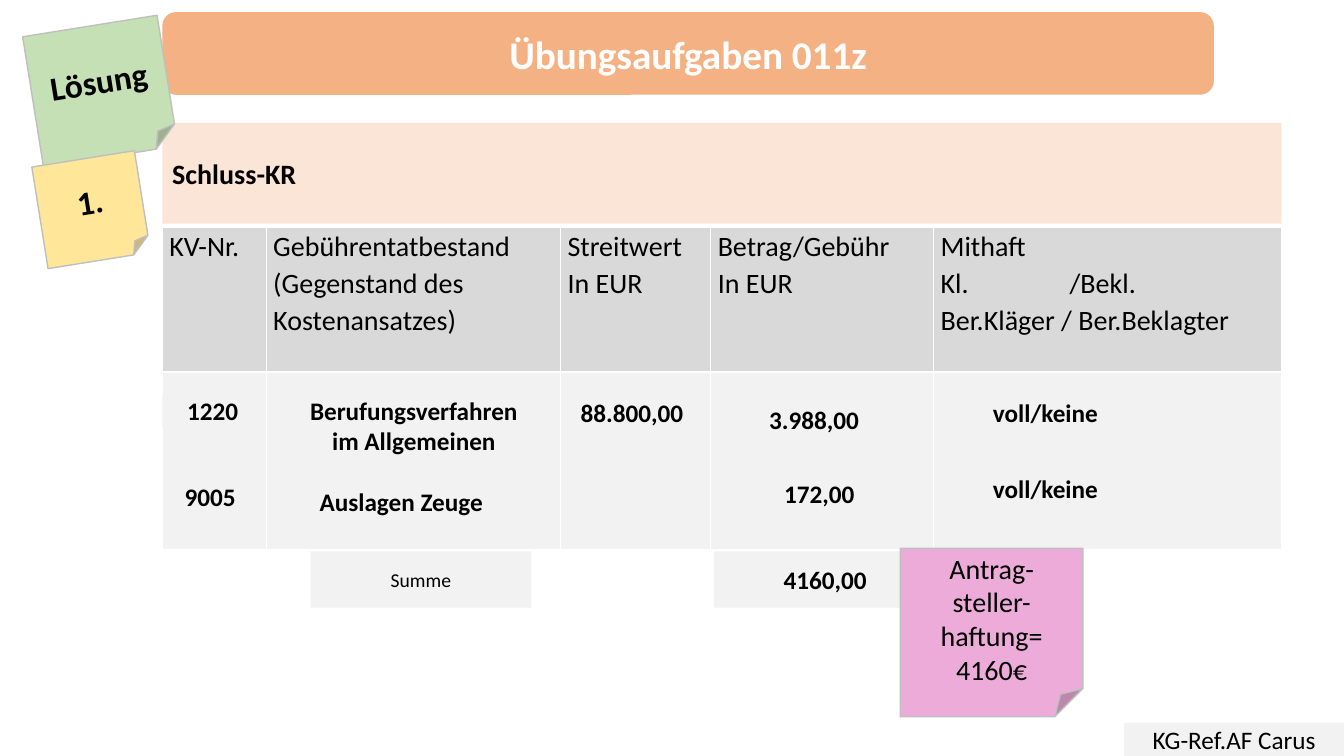
from lxml import etree
from pptx import Presentation
from pptx.dml.color import RGBColor
from pptx.enum.shapes import MSO_SHAPE as SHAPE
from pptx.enum.text import MSO_ANCHOR as ANCHOR, PP_ALIGN as ALIGN
from pptx.oxml import parse_xml
from pptx.oxml.ns import nsdecls, qn
from pptx.util import Inches, Pt

COLORS = {
    "orange": "F4B183", "peach": "FBE5D6", "header": "D9D9D9", "body": "F2F2F2",
    "green": "C5E0B4", "yellow": "FFE699", "pink": "EDABDA", "outline": "BFBFBF",
    "black": "000000", "white": "FFFFFF",
}


def write(text_frame, text, size, bold=False, align=ALIGN.CENTER, color="black", spacing=None):
    """Fill a text frame and format every paragraph alike."""
    text_frame.word_wrap = True
    text_frame.text = text
    for paragraph in text_frame.paragraphs:
        paragraph.alignment = align
        paragraph.line_spacing = spacing
        for run in paragraph.runs:
            run.font.name = "Calibri"
            run.font.size = Pt(size)
            run.font.bold = bold
            run.font.color.rgb = RGBColor.from_string(COLORS[color])


def add_box(kind, box, fill, text="", size=18, bold=False, align=ALIGN.CENTER, spacing=None):
    shape = slide.shapes.add_shape(kind, *map(Inches, box))
    shape.shadow.inherit = False
    shape.fill.solid()
    shape.fill.fore_color.rgb = RGBColor.from_string(COLORS[fill])
    if kind == SHAPE.FOLDED_CORNER:
        shape.line.color.rgb = RGBColor.from_string(COLORS["outline"])
        shape.line.width = Pt(1)
    else:
        shape.line.fill.background()
    shape.text_frame.vertical_anchor = ANCHOR.MIDDLE
    write(shape.text_frame, text, size, bold, align, spacing=spacing)
    return shape


presentation = Presentation()
presentation.slide_width = Inches(13.33)
presentation.slide_height = Inches(7.5)
slide = presentation.slides.add_slide(presentation.slide_layouts[5])

# Title bar: the title placeholder lies on a rounded rectangle
title_box = (1.61, 0.12, 10.43, 0.82)
title_bar = add_box(SHAPE.ROUNDED_RECTANGLE, title_box, "orange")
title = slide.shapes.title
title.left, title.top, title.width, title.height = map(Inches, title_box)
title.text_frame.vertical_anchor = ANCHOR.MIDDLE
write(title.text_frame, "Übungsaufgaben 011z", 28, bold=True, color="white")
title_bar._element.addnext(title._element)

# Cost table
headers = [
    "KV-Nr.",
    "Gebührentatbestand\n(Gegenstand des Kostenansatzes)",
    "Streitwert\nIn EUR",
    "Betrag/Gebühr\nIn EUR",
    "Mithaft\nKl.\t/Bekl.\nBer.Kläger / Ber.Beklagter",
]
table = slide.shapes.add_table(
    2, len(headers), Inches(1.61), Inches(2.26), Inches(11.1), Inches(3.19)).table
table.horz_banding = False
for column, width in zip(table.columns, (1.03, 2.92, 1.49, 2.21, 3.45)):
    column.width = Inches(width)
for row, height, fill in zip(table.rows, (1.43, 1.76), ("header", "body")):
    row.height = Inches(height)
    for cell in row.cells:
        cell.margin_left = cell.margin_right = Inches(0.07)
        cell.margin_top = cell.margin_bottom = 0
        properties = cell._tc.get_or_add_tcPr()
        for side in ("lnL", "lnR", "lnT", "lnB"):
            properties.append(parse_xml(
                f'<a:{side} {nsdecls("a")} w="12700"><a:solidFill>'
                f'<a:srgbClr val="{COLORS["white"]}"/></a:solidFill></a:{side}>'))
        cell.fill.solid()
        cell.fill.fore_color.rgb = RGBColor.from_string(COLORS[fill])
for cell, header in zip(table.rows[0].cells, headers):
    write(cell.text_frame, header, 20, align=ALIGN.LEFT, spacing=1.07)

# Tab stop that places "/Bekl." under "Mithaft"
liability_line = table.cell(0, 4).text_frame.paragraphs[1]
tab_list = etree.SubElement(liability_line._p.get_or_add_pPr(), qn("a:tabLst"))
etree.SubElement(tab_list, qn("a:tab"), pos=str(Inches(1.28)), algn="l")

# Section heading, sum row and footer
add_box(SHAPE.RECTANGLE, (1.61, 1.22, 11.1, 1), "peach", "Schluss-KR", 20, True, ALIGN.LEFT)
add_box(SHAPE.RECTANGLE, (3.08, 5.47, 2.19, 0.56), "body", "Summe", 14)
add_box(SHAPE.RECTANGLE, (7.08, 5.47, 2.21, 0.56), "body", "4160,00", bold=True)
add_box(SHAPE.RECTANGLE, (11.15, 7.17, 2.18, 0.33), "body", "KG-Ref.AF Carus")

# Answers laid over the body row
centered_answers = [
    ("1220", (1.61, 3.91, 1, 0.33)),
    ("Berufungsverfahren im Allgemeinen", (2.88, 3.98, 2.45, 0.48)),
    ("9005", (1.64, 4.75, 0.89, 0.35)),
    ("Auslagen Zeuge", (2.88, 4.71, 2.2, 0.52)),
]
for text, box in centered_answers:
    add_box(SHAPE.RECTANGLE, box, "body", text, bold=True)

left_answers = [
    ("88.800,00", (5.66, 3.88, 1.26, 0.41)),
    ("3.988,00", (7.53, 3.95, 1.26, 0.41)),
    ("172,00", (7.68, 4.59, 1.36, 0.58)),
    ("voll/keine", (9.75, 3.82, 2.01, 0.52)),
    ("voll/keine", (9.75, 4.58, 2.01, 0.52)),
]
for text, box in left_answers:
    add_box(SHAPE.RECTANGLE, box, "body", text, bold=True, align=ALIGN.LEFT, spacing=1.07)

# Sticky notes
notes = [
    ("Lösung", (0.32, 0.25, 1.35, 1.31), "green", 24, True, 350.9),
    ("1.", (0.39, 1.57, 1.03, 1.02), "yellow", 24, True, 350.9),
    ("Antrag-steller-\nhaftung= 4160€", (8.93, 5.44, 1.81, 1.67), "pink", 20, False, 0),
]
for text, box, fill, size, bold, rotation in notes:
    note = add_box(SHAPE.FOLDED_CORNER, box, fill, text, size, bold)
    note.rotation = rotation

presentation.save("out.pptx")
